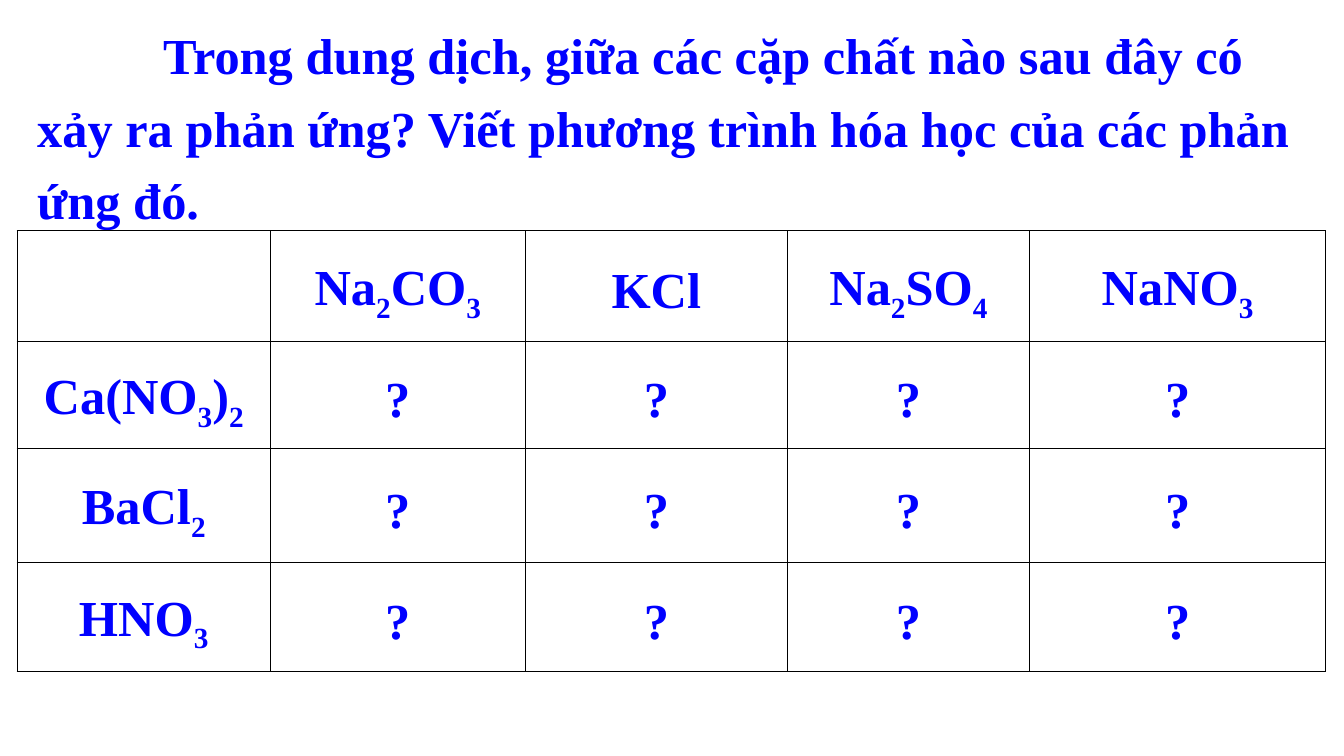
from itertools import groupby

from pptx import Presentation
from pptx.dml.color import RGBColor
from pptx.enum.text import MSO_ANCHOR, PP_ALIGN
from pptx.oxml import parse_xml
from pptx.oxml.ns import nsdecls
from pptx.util import Inches, Pt

COLORS = {"text": "0000FF", "border": "000000", "cell": "FFFFFF"}
FONT = "Times New Roman"
QUESTION = (
    "Trong dung dịch, giữa các cặp chất nào sau đây có xảy ra phản ứng? "
    "Viết phương trình hóa học của các phản ứng đó."
)
COLUMN_SALTS = ["Na2CO3", "KCl", "Na2SO4", "NaNO3"]
ROW_SUBSTANCES = ["Ca(NO3)2", "BaCl2", "HNO3"]
COLUMN_WIDTHS = [2.51, 2.53, 2.6, 2.4, 2.94]
ROW_HEIGHTS = [1.1, 1.06, 1.13, 1.08]


def space_paragraph(paragraph):
    paragraph.line_spacing = 1.2
    paragraph.space_after = Pt(0.6)


def add_run(paragraph, text, subscript=False):
    run = paragraph.add_run()
    run.text = text
    run.font.name = FONT
    run.font.size = Pt(36)
    run.font.bold = True
    run.font.color.rgb = RGBColor.from_string(COLORS["text"])
    if subscript:
        run.font._element.set("baseline", "-25000")


def add_question(slide):
    box = slide.shapes.add_textbox(Inches(0.27), Inches(0.07), Inches(12.88), Inches(2.22))
    box.text_frame.word_wrap = True
    paragraph = box.text_frame.paragraphs[0]
    space_paragraph(paragraph)
    paragraph._p.get_or_add_pPr().set("indent", str(Inches(1.25)))
    add_run(paragraph, QUESTION)


def add_borders(cell):
    properties = cell._tc.get_or_add_tcPr()
    for position, side in enumerate(("lnL", "lnR", "lnT", "lnB")):
        properties.insert(position, parse_xml(
            f'<a:{side} {nsdecls("a")} w="{Pt(1)}"><a:solidFill>'
            f'<a:srgbClr val="{COLORS["border"]}"/></a:solidFill></a:{side}>'
        ))


def fill_cell(cell, formula):
    """Write a formula with every digit as a subscript."""
    cell.fill.solid()
    cell.fill.fore_color.rgb = RGBColor.from_string(COLORS["cell"])
    cell.vertical_anchor = MSO_ANCHOR.MIDDLE
    add_borders(cell)
    paragraph = cell.text_frame.paragraphs[0]
    paragraph.alignment = PP_ALIGN.CENTER
    space_paragraph(paragraph)
    for is_digit, characters in groupby(formula, str.isdigit):
        add_run(paragraph, "".join(characters), subscript=is_digit)


def add_reaction_table(slide):
    reactions = [["", *COLUMN_SALTS]]
    reactions += [[substance] + ["?"] * len(COLUMN_SALTS) for substance in ROW_SUBSTANCES]
    table = slide.shapes.add_table(
        len(ROW_HEIGHTS), len(COLUMN_WIDTHS), Inches(0.17), Inches(2.29),
        Inches(sum(COLUMN_WIDTHS)), Inches(sum(ROW_HEIGHTS)),
    ).table
    table.first_row = False
    table.horz_banding = False
    for column, width in zip(table.columns, COLUMN_WIDTHS):
        column.width = Inches(width)
    for row, height, formulas in zip(table.rows, ROW_HEIGHTS, reactions):
        row.height = Inches(height)
        for cell, formula in zip(row.cells, formulas):
            fill_cell(cell, formula)


def main():
    presentation = Presentation()
    presentation.slide_width = Inches(13.33)
    presentation.slide_height = Inches(7.5)
    slide = presentation.slides.add_slide(presentation.slide_layouts[6])
    add_question(slide)
    add_reaction_table(slide)
    presentation.save("out.pptx")


if __name__ == "__main__":
    main()
